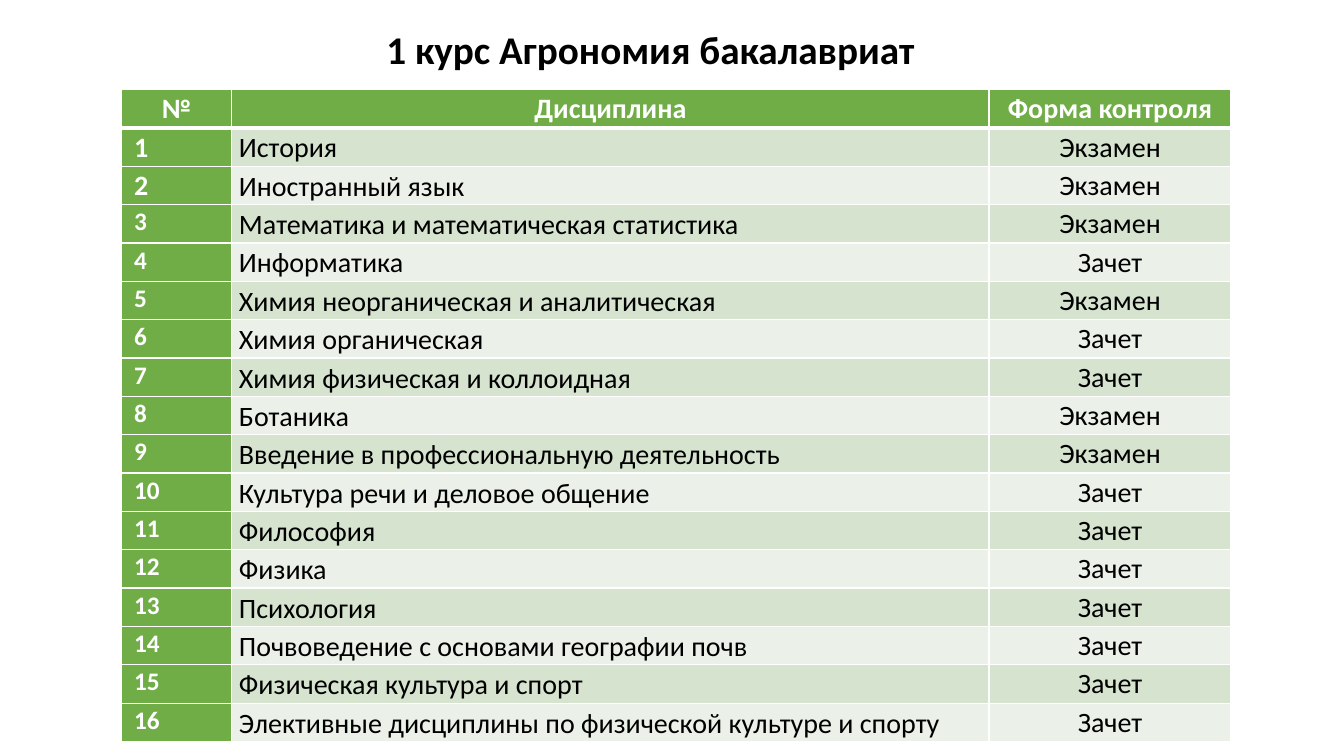
import pptx
import pptx.dml.color
import pptx.enum.text
import pptx.oxml.ns
import pptx.util
from lxml import etree

Inches, Pt = pptx.util.Inches, pptx.util.Pt
ALIGN = pptx.enum.text.PP_ALIGN
ANCHOR = pptx.enum.text.MSO_ANCHOR
COLORS = {"green": "70AD47", "dark": "D5E3CF", "light": "EBF1E9",
          "white": "FFFFFF", "black": "000000"}
HEADS = ["№", "Дисциплина", "Форма контроля"]
EXAM, PASS = "Экзамен", "Зачет"
COURSES = [
    ("История", EXAM),
    ("Иностранный язык", EXAM),
    ("Математика и математическая статистика", EXAM),
    ("Информатика", PASS),
    ("Химия неорганическая и аналитическая", EXAM),
    ("Химия органическая", PASS),
    ("Химия физическая и коллоидная", PASS),
    ("Ботаника", EXAM),
    ("Введение в профессиональную деятельность", EXAM),
    ("Культура речи и деловое общение", PASS),
    ("Философия", PASS),
    ("Физика", PASS),
    ("Психология", PASS),
    ("Почвоведение с основами географии почв", PASS),
    ("Физическая культура и спорт", PASS),
    ("Элективные дисциплины по физической культуре и спорту", PASS),
]


def color(name):
    return pptx.dml.color.RGBColor.from_string(COLORS[name])


def write(frame, text, size, ink, bold, align, spacing):
    para = frame.paragraphs[0]
    para.alignment = align
    para.line_spacing = spacing
    run = para.add_run()
    run.text = text
    font = run.font
    font.name, font.size, font.bold = "Calibri", Pt(size), bold
    font.color.rgb = color(ink)
    return para


def border(cell, bottom):
    """Draw white cell edges, the bottom one with its own width in points."""
    props = cell._tc.get_or_add_tcPr()
    qn = pptx.oxml.ns.qn
    widths = {"a:lnL": 1, "a:lnR": 1, "a:lnT": 1, "a:lnB": bottom}
    for place, (tag, width) in enumerate(widths.items()):
        line = etree.Element(qn(tag), w=str(Pt(width)))
        fill = etree.SubElement(line, qn("a:solidFill"))
        etree.SubElement(fill, qn("a:srgbClr"), val=COLORS["white"])
        props.insert(place, line)


def fill_cell(cell, text, fill, size=20, ink="black", bold=False,
              align=ALIGN.LEFT, anchor=ANCHOR.TOP, left=0.07, bottom=1):
    cell.margin_left, cell.margin_right = Inches(left), Inches(0.07)
    cell.margin_top = cell.margin_bottom = 0
    cell.vertical_anchor = anchor
    cell.fill.solid()
    cell.fill.fore_color.rgb = color(fill)
    border(cell, bottom)
    write(cell.text_frame, text, size, ink, bold, align, 1.07)


def add_title(slide):
    box = slide.shapes.add_textbox(Inches(0.7), Inches(0.25), Inches(11.5), Inches(1.03))
    box.text_frame.word_wrap = True
    para = write(box.text_frame, "1 курс Агрономия бакалавриат", 28, "black", True,
                 ALIGN.CENTER, 0.9)
    para.space_before = Pt(10)


def add_plan(slide):
    table = slide.shapes.add_table(len(COURSES) + 1, len(HEADS), Inches(1.2), Inches(0.89),
                                   Inches(11.01), Inches(6.47)).table
    for col, width in zip(table.columns, (1.1, 7.51, 2.4)):
        col.width = Inches(width)
    for col, head in enumerate(HEADS):
        fill_cell(table.cell(0, col), head, "green", ink="white", bold=True,
                  align=ALIGN.CENTER, bottom=3)
    for row, (course, test) in enumerate(COURSES, 1):
        band = "dark" if row % 2 else "light"
        fill_cell(table.cell(row, 0), str(row), "green", size=20 if row < 3 else 18,
                  ink="white", bold=True, left=0.13)
        fill_cell(table.cell(row, 1), course, band, anchor=ANCHOR.MIDDLE)
        fill_cell(table.cell(row, 2), test, band, align=ALIGN.CENTER)


def main():
    deck = pptx.Presentation()
    deck.slide_width, deck.slide_height = Inches(13.33), Inches(7.5)
    slide = deck.slides.add_slide(deck.slide_layouts[6])
    add_title(slide)
    add_plan(slide)
    deck.save("out.pptx")


if __name__ == "__main__":
    main()
